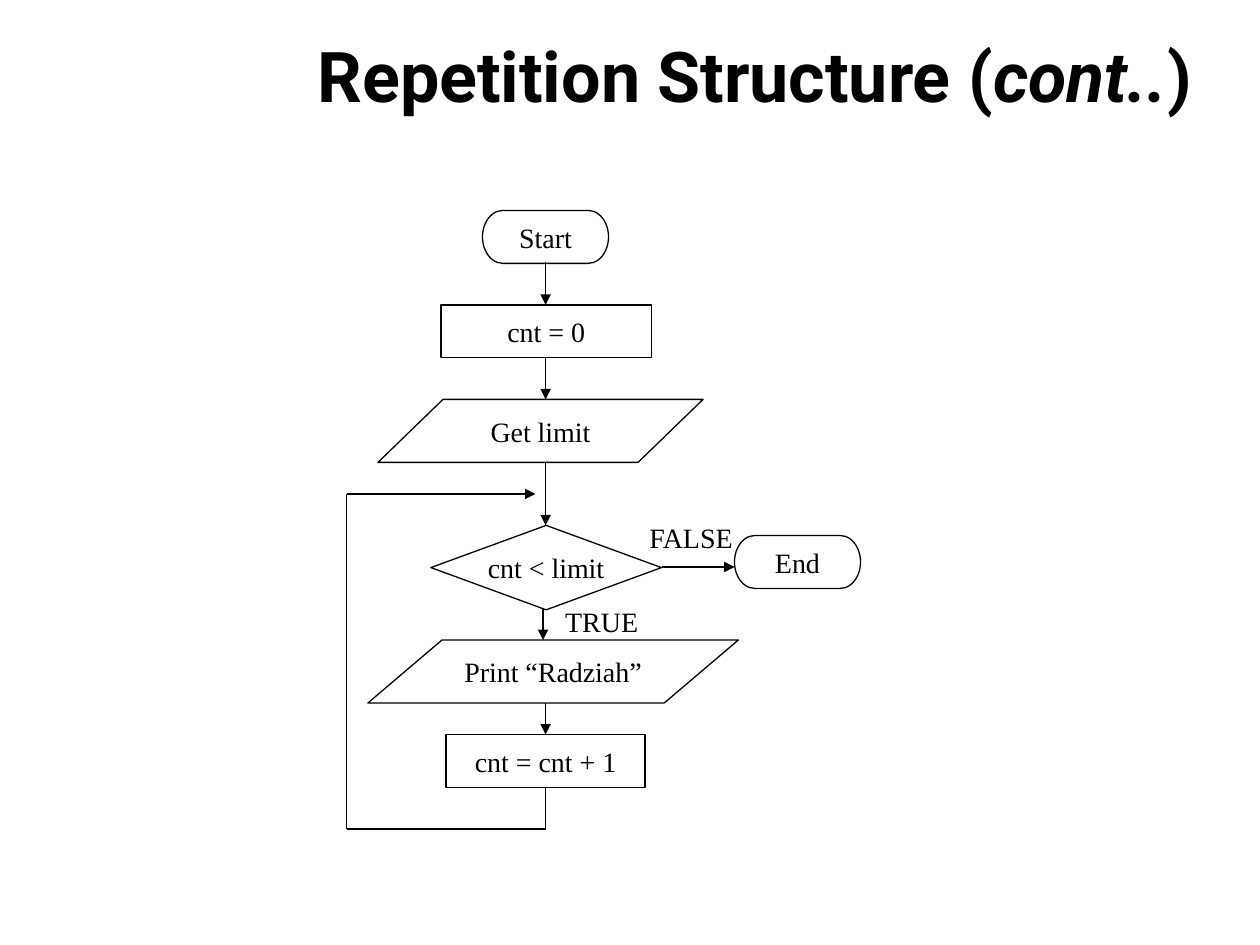
import pptx
import pptx.dml.color
import pptx.enum.shapes
import pptx.enum.text
import pptx.oxml
import pptx.oxml.ns
import pptx.util
from pptx.util import Inches

BLACK = pptx.dml.color.RGBColor(0x00, 0x00, 0x00)
WHITE = pptx.dml.color.RGBColor(0xFF, 0xFF, 0xFF)
SHAPE = pptx.enum.shapes.MSO_SHAPE
ANCHOR = pptx.enum.text.MSO_ANCHOR
CENTER = pptx.enum.text.PP_ALIGN.CENTER
AXIS = 4.33


class FlowchartSlide:
    """Draws flowchart elements in one style on the current slide."""

    title_font = "Roboto"
    body_font = "Times New Roman"
    title_size = pptx.util.Pt(40)
    body_size = pptx.util.Pt(16)
    line_width = pptx.util.Pt(0.75)

    def __init__(self, slide):
        self.slide = slide

    def style(self, paragraph, name, size):
        paragraph.alignment = CENTER
        paragraph.font.name = name
        paragraph.font.size = size
        paragraph.font.color.rgb = BLACK

    def title(self, spans, left, top, width, height):
        box = self.slide.shapes.title
        box.left, box.top = Inches(left), Inches(top)
        box.width, box.height = Inches(width), Inches(height)
        box.text_frame.vertical_anchor = ANCHOR.MIDDLE
        box.text_frame.word_wrap = True
        para = box.text_frame.paragraphs[0]
        properties = para._p.get_or_add_pPr()
        properties.set("marL", str(Inches(0.38)))
        properties.set("indent", str(Inches(-0.38)))
        for text, italic in spans:
            span = para.add_run()
            span.text = text
            span.font.italic = italic
        self.style(para, self.title_font, self.title_size)
        para.font.bold = True

    def step(self, kind, text, left, top, width, height, wrap=True, fill=None):
        box = self.slide.shapes.add_shape(
            kind, Inches(left), Inches(top), Inches(width), Inches(height))
        box.shadow.inherit = False
        if fill is None:
            box.fill.background()
        else:
            box.fill.solid()
            box.fill.fore_color.rgb = fill
        box.line.color.rgb = BLACK
        box.line.width = self.line_width
        frame = box.text_frame
        frame.word_wrap = wrap
        frame.vertical_anchor = ANCHOR.MIDDLE
        frame.text = text
        self.style(frame.paragraphs[0], self.body_font, self.body_size)

    def label(self, text, left, top, width, height):
        box = self.slide.shapes.add_textbox(
            Inches(left), Inches(top), Inches(width), Inches(height))
        frame = box.text_frame
        frame.word_wrap = False
        frame.auto_size = pptx.enum.text.MSO_AUTO_SIZE.SHAPE_TO_FIT_TEXT
        frame.text = text
        self.style(frame.paragraphs[0], self.body_font, self.body_size)

    def line(self, start, end, arrow=True):
        connector = self.slide.shapes.add_connector(
            pptx.enum.shapes.MSO_CONNECTOR.STRAIGHT,
            *(Inches(value) for value in (*start, *end)))
        connector.line.color.rgb = BLACK
        connector.line.width = self.line_width
        if arrow:
            head = pptx.oxml.parse_xml(
                f'<a:tailEnd {pptx.oxml.ns.nsdecls("a")} type="triangle"/>')
            connector.line._get_or_add_ln().append(head)
        connector._element.spPr.append(
            pptx.oxml.parse_xml(f'<a:effectLst {pptx.oxml.ns.nsdecls("a")}/>'))


def main():
    deck = pptx.Presentation()
    deck.slide_width, deck.slide_height = Inches(10), Inches(7.5)
    page = FlowchartSlide(deck.slides.add_slide(deck.slide_layouts[5]))

    page.title(
        [("Repetition Structure (", False), ("cont..", True), (")", False)],
        1.99, 0.12, 8, 0.95)

    for x, top, bottom in [
        (AXIS, 2.08, 2.42), (AXIS, 2.83, 3.17), (AXIS, 3.67, 4.17),
        (4.31, 4.83, 5.08), (AXIS, 5.58, 5.83),
    ]:
        page.line((x, top), (x, bottom))
    page.line((5.25, 4.5), (5.83, 4.5))

    loop = [(AXIS, 6.25), (AXIS, 6.58), (2.75, 6.58), (2.75, 3.92), (4.25, 3.92)]
    for start, end in zip(loop, loop[1:]):
        page.line(start, end, arrow=end == loop[-1])

    page.step(SHAPE.FLOWCHART_TERMINATOR, "Start", 3.83, 1.67, 1, 0.42)
    page.step(SHAPE.RECTANGLE, "cnt = 0", 3.5, 2.42, 1.67, 0.42, wrap=False)
    page.step(SHAPE.FLOWCHART_DATA, "Get limit", 3, 3.17, 2.58, 0.5)
    page.step(SHAPE.FLOWCHART_DECISION, "cnt < limit", 3.42, 4.17, 1.83, 0.67,
              wrap=False, fill=WHITE)
    page.step(SHAPE.FLOWCHART_DATA, "Print “Radziah”", 2.92, 5.08, 2.94, 0.5)
    page.step(SHAPE.RECTANGLE, "cnt = cnt + 1", 3.54, 5.83, 1.58, 0.42, wrap=False)
    page.step(SHAPE.FLOWCHART_TERMINATOR, "End", 5.83, 4.25, 1, 0.42)

    page.label("FALSE", 5.05, 4.08, 0.87, 0.37)
    page.label("TRUE", 4.38, 4.75, 0.79, 0.37)

    deck.save("out.pptx")


if __name__ == "__main__":
    main()
